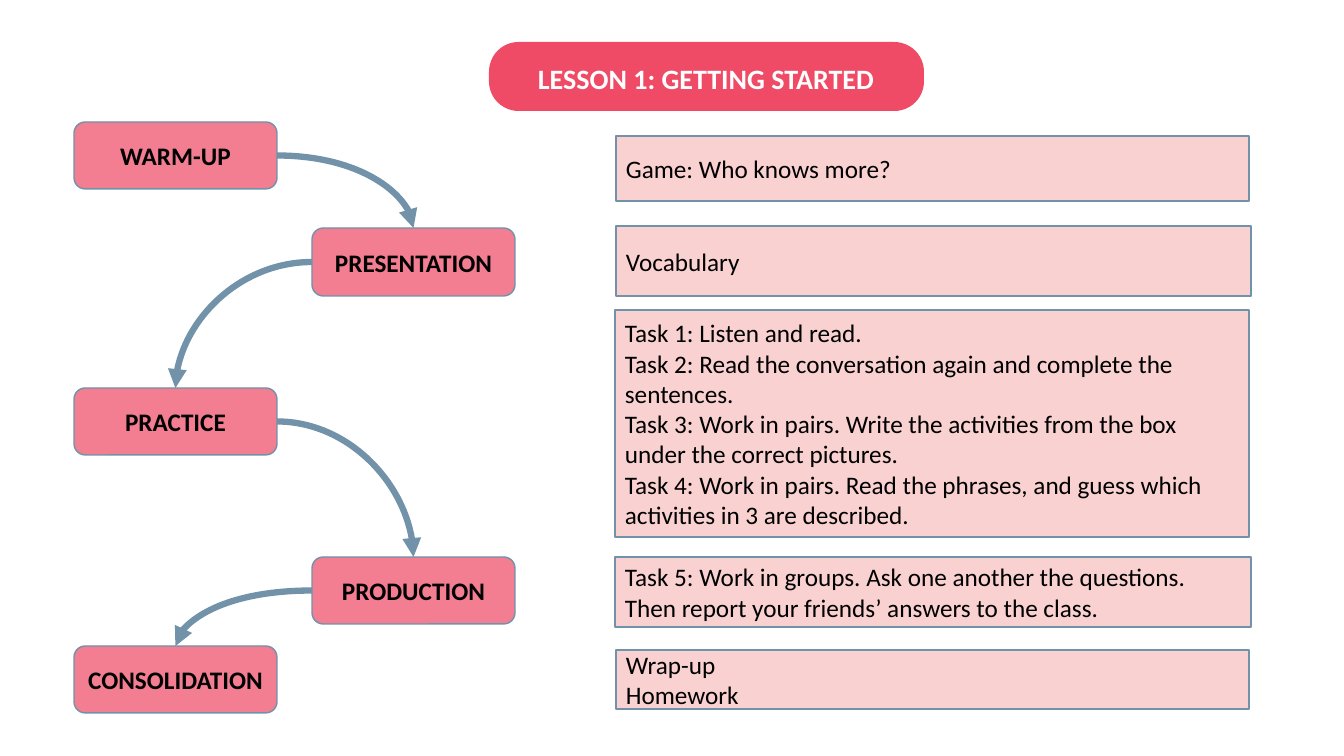
from lxml import etree
from pptx import Presentation
from pptx.dml.color import RGBColor
from pptx.enum.shapes import MSO_CONNECTOR, MSO_SHAPE
from pptx.enum.text import MSO_ANCHOR, PP_ALIGN
from pptx.oxml.ns import qn
from pptx.util import Pt

RECTANGLE, ROUNDED = MSO_SHAPE.RECTANGLE, MSO_SHAPE.ROUNDED_RECTANGLE
CURVE = MSO_CONNECTOR.CURVE
LEFT, CENTER = PP_ALIGN.LEFT, PP_ALIGN.CENTER
TOP, MIDDLE = MSO_ANCHOR.TOP, MSO_ANCHOR.MIDDLE
TOP_SITE, LEFT_SITE, RIGHT_SITE = 0, 1, 3

SLIDE_SIZE = (1344, 756)
EMU_PER_PX = 914400 / 100.8

TITLE = "LESSON 1: GETTING STARTED"
BANNER_BOX = (489, 42, 435, 69)
TITLE_BOX = (528, 57, 396, 44)

# Stage name, top, height
STAGES = [
    ("WARM-UP", 122, 67),
    ("PRESENTATION", 228, 68),
    ("PRACTICE", 388, 67),
    ("PRODUCTION", 557, 67),
    ("CONSOLIDATION", 646, 67),
]
STAGE_COLUMNS = (74, 312)
STAGE_WIDTH = 203

# Box, lines
ACTIVITIES = [
    ((616, 136, 633, 65), ["Game: Who knows more?"]),
    ((616, 226, 635, 70), ["Vocabulary"]),
    ((615, 310, 634, 227), [
        "Task 1: Listen and read.",
        "Task 2: Read the conversation again and complete the sentences.",
        "Task 3: Work in pairs. Write the activities from the box under the correct pictures.",
        "Task 4: Work in pairs. Read the phrases, and guess which activities in 3 are described.",
    ]),
    ((615, 557, 636, 70), [
        "Task 5: Work in groups. Ask one another the questions. "
        "Then report your friends’ answers to the class.",
    ]),
    ((616, 650, 633, 59), ["Wrap-up", "Homework"]),
]

THEME = {
    "font": "Calibri",
    "title_size": 20,
    "body_size": 18,
    "banner": "EF4B66",
    "stage": "F37D91",
    "activity": "F7A5A5",
    "activity_alpha": 50,
    "line": "7192A9",
    "text": "000000",
    "title_text": "FFFFFF",
    "border": 1,
    "arrow": 4.5,
}


def emu(*lengths):
    return [round(length * EMU_PER_PX) for length in lengths]


def color(name):
    return RGBColor.from_string(THEME[name])


def write(shape, lines, align=LEFT, anchor=MIDDLE, size="body_size",
          text_color="text", bold=False):
    frame = shape.text_frame
    frame.word_wrap = True
    frame.vertical_anchor = anchor
    frame.text = "\n".join(lines)
    for paragraph in frame.paragraphs:
        paragraph.alignment = align
        font = paragraph.font
        font.name, font.size, font.bold = THEME["font"], Pt(THEME[size]), bold
        font.color.rgb = color(text_color)


def add_box(slide, kind, box, fill, bordered=True):
    shape = slide.shapes.add_shape(kind, *emu(*box))
    shape.shadow.inherit = False
    shape.fill.solid()
    shape.fill.fore_color.rgb = color(fill)
    if bordered:
        shape.line.color.rgb = color("line")
        shape.line.width = Pt(THEME["border"])
    else:
        shape.line.fill.background()
    return shape


def set_alpha(shape, percent):
    rgb = shape._element.spPr.find(qn("a:solidFill")).find(qn("a:srgbClr"))
    etree.SubElement(rgb, qn("a:alpha")).set("val", str(percent * 1000))


def add_arrow(slide, source, target):
    """Curve from the facing side of one stage to the top of the next."""
    connector = slide.shapes.add_connector(CURVE, 0, 0, 0, 0)
    side = RIGHT_SITE if source.left < target.left else LEFT_SITE
    connector.begin_connect(source, side)
    connector.end_connect(target, TOP_SITE)
    connector.line.color.rgb = color("line")
    connector.line.width = Pt(THEME["arrow"])
    properties = connector._element.spPr
    properties.find(qn("a:prstGeom")).set("prst", "curvedConnector2")
    line = properties.find(qn("a:ln"))
    etree.SubElement(line, qn("a:tailEnd")).set("type", "triangle")
    etree.SubElement(properties, qn("a:effectLst"))


def main():
    deck = Presentation()
    deck.slide_width, deck.slide_height = emu(*SLIDE_SIZE)
    slide = deck.slides.add_slide(deck.slide_layouts[6])

    banner = add_box(slide, ROUNDED, BANNER_BOX, "banner", bordered=False)
    banner.adjustments[0] = 0.43
    title = slide.shapes.add_textbox(*emu(*TITLE_BOX))
    write(title, [TITLE], anchor=TOP, size="title_size",
          text_color="title_text", bold=True)

    stages = []
    for index, (name, top, height) in enumerate(STAGES):
        left = STAGE_COLUMNS[index % 2]
        stage = add_box(slide, ROUNDED, (left, top, STAGE_WIDTH, height), "stage")
        write(stage, [name], align=CENTER, bold=True)
        stages.append(stage)
    for source, target in zip(stages, stages[1:]):
        add_arrow(slide, source, target)

    for box, lines in ACTIVITIES:
        activity = add_box(slide, RECTANGLE, box, "activity")
        set_alpha(activity, THEME["activity_alpha"])
        write(activity, lines)

    deck.save("out.pptx")


if __name__ == "__main__":
    main()
